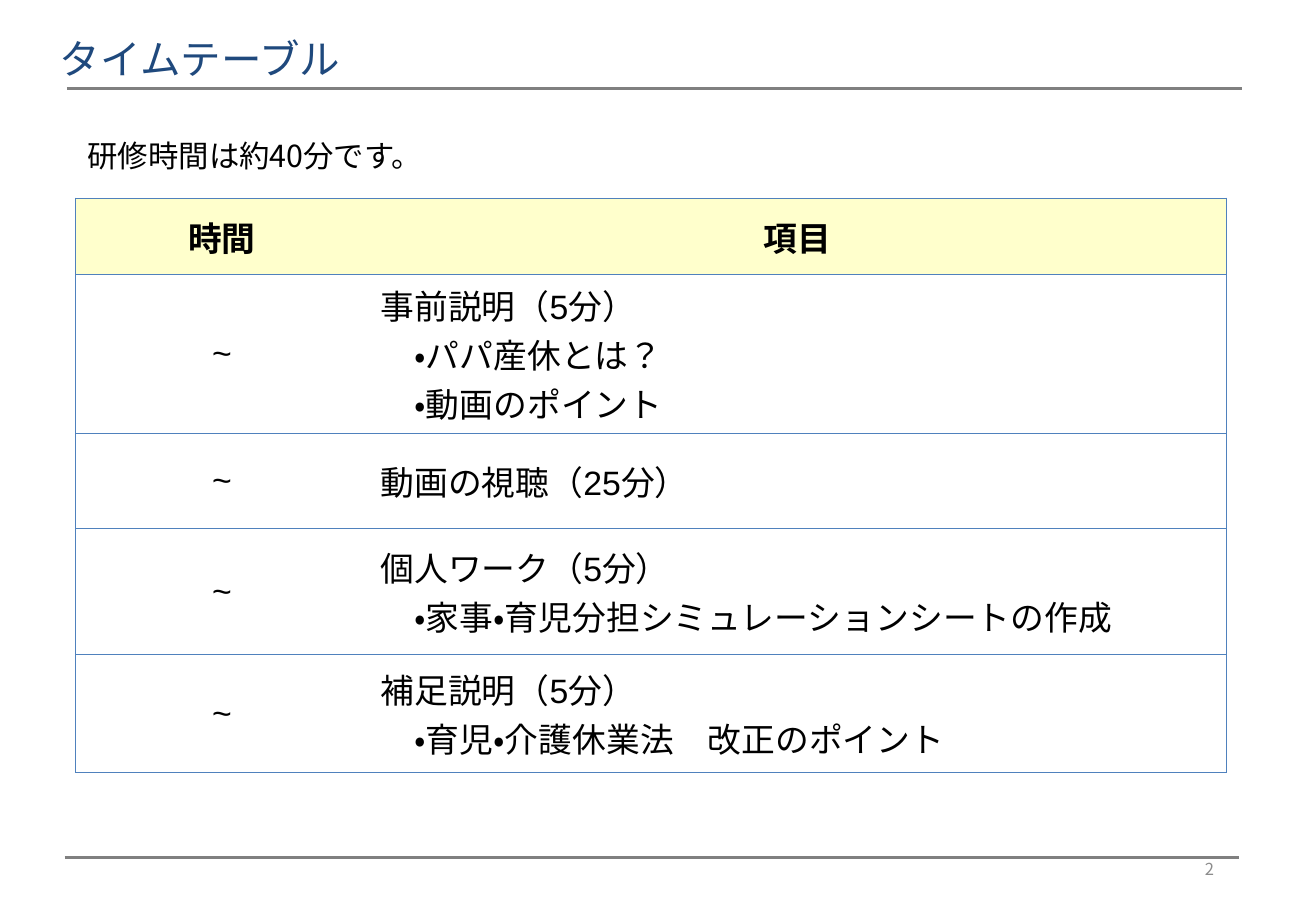
import pptx
import pptx.dml.color
import pptx.enum.lang
import pptx.enum.shapes
import pptx.enum.text
import pptx.oxml
import pptx.oxml.ns
import pptx.util

Cm, Pt = pptx.util.Cm, pptx.util.Pt
RGBColor = pptx.dml.color.RGBColor
ALIGN = pptx.enum.text.PP_ALIGN
MIDDLE = pptx.enum.text.MSO_ANCHOR.MIDDLE
JAPANESE = pptx.enum.lang.MSO_LANGUAGE_ID.JAPANESE

# Content
TITLE = "タイムテーブル"
INTRO = "研修時間は約40分です。"
PAGE = "2"
HEADER = ("時間", ["項目"])
TIME = "~"
ITEMS = [
    ["事前説明（5分）", "　・パパ産休とは？", "　・動画のポイント"],
    ["動画の視聴（25分）"],
    ["個人ワーク（5分）", "　・家事・育児分担シミュレーションシートの作成"],
    ["補足説明（5分）", "　・育児・介護休業法　改正のポイント"],
]

# Layout and style
COL_WIDTHS = [Cm(6.12), Cm(17.93)]
ROW_HEIGHTS = [Cm(1.6), Cm(3.28), Cm(1.98), Cm(2.64), Cm(2.46)]
RULES = [(Cm(1.4), Cm(1.85)), (Cm(1.35), Cm(17.93))]
RULE_WIDTH = Cm(24.56)
NOTO, ARIAL = "Noto Sans CJK JP", "Arial"
NAVY = RGBColor(0x1F, 0x49, 0x7D)
BLUE = RGBColor(0x4F, 0x81, 0xBD)
GRAY = RGBColor(0x80, 0x80, 0x80)
PAGE_GRAY = RGBColor(0x8C, 0x8C, 0x8C)
CREAM = RGBColor(0xFF, 0xFF, 0xCC)
WHITE = RGBColor(0xFF, 0xFF, 0xFF)
BLACK = RGBColor(0, 0, 0)


def write(tf, lines, font, size, color, align=ALIGN.LEFT, bold=False):
    tf.word_wrap = True
    for i, line in enumerate(lines):
        p = tf.paragraphs[0] if i == 0 else tf.add_paragraph()
        p.text = line
        p.alignment = align
        p.font.name, p.font.size, p.font.bold = font, Pt(size), bold
        p.font.color.rgb = color
        p.font.language_id = JAPANESE


def add_text(slide, box, text, size, color, align=ALIGN.LEFT):
    tf = slide.shapes.add_textbox(*box).text_frame
    tf.vertical_anchor = MIDDLE
    write(tf, [text], NOTO, size, color, align)


def set_borders(cell, hidden):
    tc_pr = cell._tc.get_or_add_tcPr()
    for i, side in enumerate(("lnL", "lnR", "lnT", "lnB")):
        paint = ("<a:noFill/>" if side == hidden else
                 f'<a:solidFill><a:srgbClr val="{BLUE}"/></a:solidFill>')
        tc_pr.insert(i, pptx.oxml.parse_xml(
            f'<a:{side} {pptx.oxml.ns.nsdecls("a")} w="{Pt(0.5)}">{paint}</a:{side}>'))


def add_rule(slide, left, top):
    line = slide.shapes.add_connector(
        pptx.enum.shapes.MSO_CONNECTOR.STRAIGHT, left, top, left + RULE_WIDTH, top)
    line.line.color.rgb = GRAY
    line.line.width = Pt(2.25)
    line._element.spPr.append(pptx.oxml.parse_xml(
        f'<a:effectLst {pptx.oxml.ns.nsdecls("a")}/>'))


def add_timetable(slide):
    rows = [HEADER] + [(TIME, lines) for lines in ITEMS]
    table = slide.shapes.add_table(
        len(rows), 2, Cm(1.58), Cm(4.14), sum(COL_WIDTHS), sum(ROW_HEIGHTS)).table
    table.horz_banding = False
    for column, width in zip(table.columns, COL_WIDTHS):
        column.width = width
    for r, (time, lines) in enumerate(rows):
        table.rows[r].height = ROW_HEIGHTS[r]
        is_header = r == 0
        for c, content in enumerate(([time], lines)):
            cell = table.cell(r, c)
            cell.vertical_anchor = MIDDLE
            cell.fill.solid()
            cell.fill.fore_color.rgb = CREAM if is_header else WHITE
            centred = is_header or c == 0
            write(cell.text_frame, content, ARIAL, 20, BLACK,
                  ALIGN.CENTER if centred else ALIGN.LEFT, is_header)
            set_borders(cell, "lnR" if c == 0 else "lnL")


def main():
    prs = pptx.Presentation()
    prs.slide_width, prs.slide_height = Cm(27.51), Cm(19.05)
    slide = prs.slides.add_slide(prs.slide_layouts[5])

    # Rules above and below the content
    for left, top in RULES:
        add_rule(slide, left, top)

    # Title
    title = slide.shapes.title
    title.left, title.top, title.width, title.height = Cm(1), Cm(0.58), Cm(24.16), Cm(1.27)
    title.text_frame.vertical_anchor = MIDDLE
    write(title.text_frame, [TITLE], NOTO, 24, NAVY)

    # Timetable, intro line and page number
    add_timetable(slide)
    add_text(slide, (Cm(1.58), Cm(2.74), Cm(7.82), Cm(1.02)), INTRO, 18, BLACK)
    add_text(slide, (Cm(19.43), Cm(17.65), Cm(6.2), Cm(1.02)), PAGE, 9.8, PAGE_GRAY,
             ALIGN.RIGHT)

    prs.save("out.pptx")


if __name__ == "__main__":
    main()
